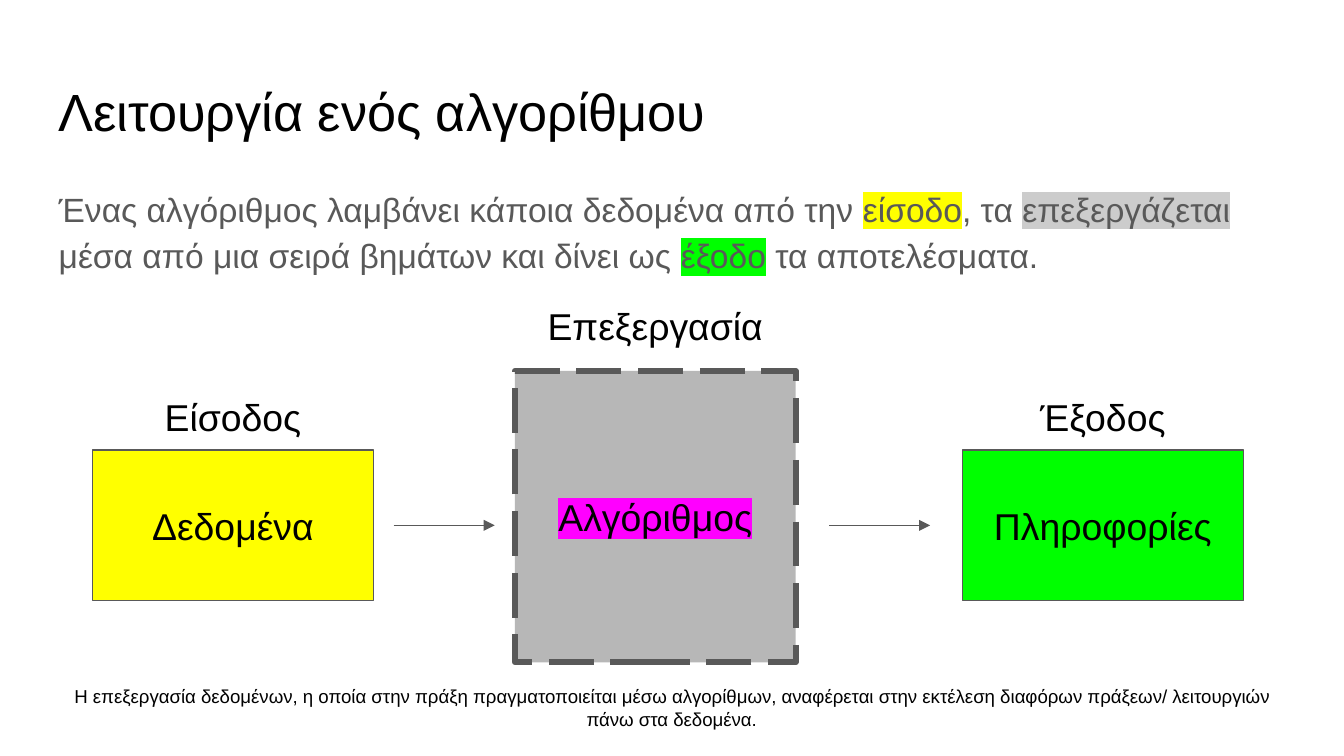
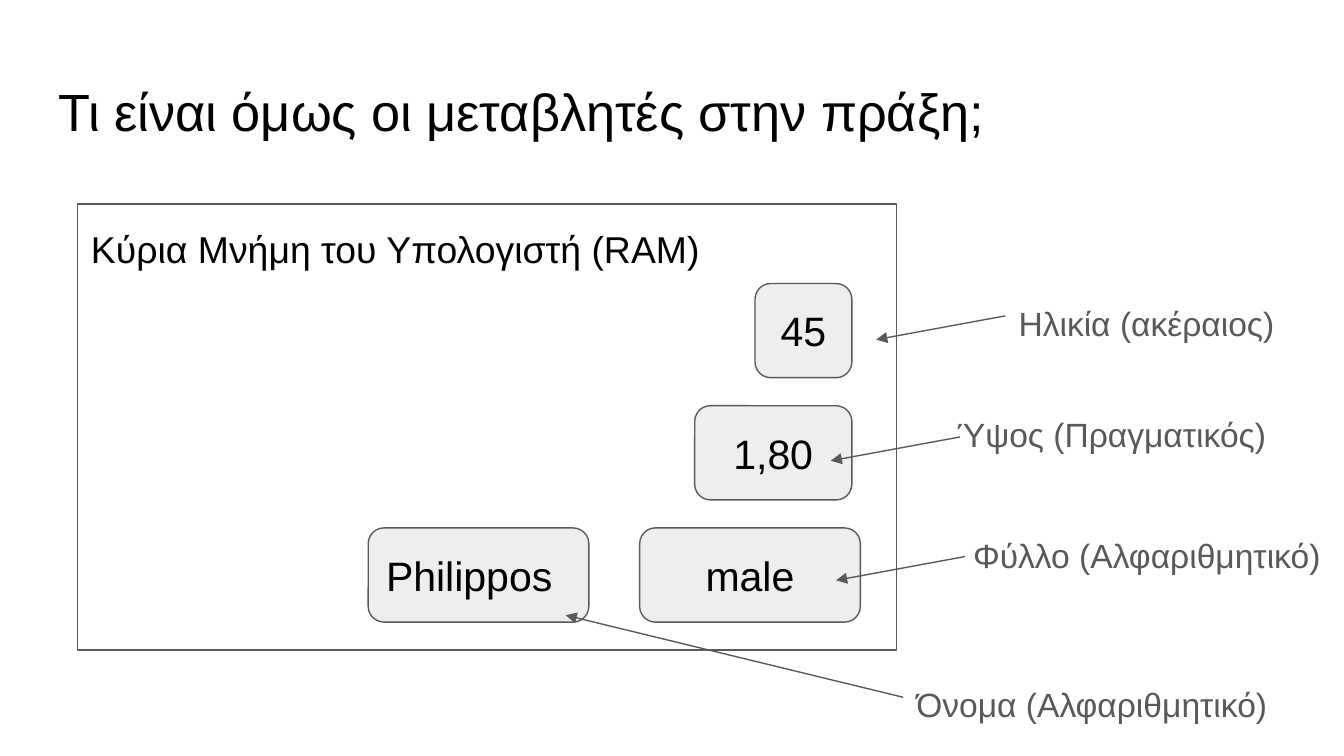
from lxml import etree
from pptx import Presentation
from pptx.dml.color import RGBColor
from pptx.enum.dml import MSO_LINE
from pptx.enum.shapes import MSO_CONNECTOR, MSO_SHAPE
from pptx.enum.text import MSO_ANCHOR, MSO_AUTO_SIZE, PP_ALIGN
from pptx.oxml.ns import qn
from pptx.util import Cm, Pt

RECT = MSO_SHAPE.RECTANGLE
ROUNDED = MSO_SHAPE.ROUNDED_RECTANGLE
STRAIGHT = MSO_CONNECTOR.STRAIGHT
LONG_DASH = MSO_LINE.LONG_DASH
TOP, MIDDLE = MSO_ANCHOR.TOP, MSO_ANCHOR.MIDDLE
LEFT, CENTER = PP_ALIGN.LEFT, PP_ALIGN.CENTER
NO_FIT = MSO_AUTO_SIZE.NONE

BLACK = RGBColor(0x00, 0x00, 0x00)
WHITE = RGBColor(0xFF, 0xFF, 0xFF)
DARK_GREY = RGBColor(0x59, 0x59, 0x59)
MID_GREY = RGBColor(0xB7, 0xB7, 0xB7)
SOFT_GREY = RGBColor(0xCC, 0xCC, 0xCC)
PALE_GREY = RGBColor(0xEE, 0xEE, 0xEE)
YELLOW = RGBColor(0xFF, 0xFF, 0x00)
GREEN = RGBColor(0x00, 0xFF, 0x00)
MAGENTA = RGBColor(0xFF, 0x00, 0xFF)

FONT = "Arial"
INSET = Cm(0.25)
FRAME = {
    "word_wrap": True, "auto_size": NO_FIT, "margin_left": INSET,
    "margin_right": INSET, "margin_top": INSET, "margin_bottom": INSET,
}
PROSE = {"line_spacing": 1.15, "space_after": Pt(16)}
TITLE_BOX = (0.86, 1.24, 23.67, 1.6)


def apply(target, formats):
    for attribute, value in formats.items():
        setattr(target, attribute, value)


def place(shape, box):
    sides = ("left", "top", "width", "height")
    apply(shape, {side: Cm(length) for side, length in zip(sides, box)})


def highlight(run, color):
    fill = run.font._element.find(qn("a:solidFill"))
    marker = etree.Element(qn("a:highlight"))
    etree.SubElement(marker, qn("a:srgbClr"), val=str(color))
    fill.addnext(marker)


def write(shape, runs, size, color=BLACK, align=LEFT, anchor=TOP, spacing=None):
    frame = shape.text_frame
    apply(frame, {**FRAME, "vertical_anchor": anchor})
    paragraph = frame.paragraphs[0]
    apply(paragraph, {"alignment": align, **(spacing or {})})
    for text, marker in runs:
        run = paragraph.add_run()
        run.text = text
        apply(run.font, {"name": FONT, "size": Pt(size)})
        run.font.color.rgb = color
        if marker:
            highlight(run, marker)


def add_text(slide, box, runs, size, **formats):
    textbox = slide.shapes.add_textbox(*map(Cm, box))
    write(textbox, runs, size, **formats)


def add_block(slide, kind, box, fill=None, border=0.75):
    block = slide.shapes.add_shape(kind, *map(Cm, box))
    block.shadow.inherit = False
    if fill is None:
        block.fill.background()
    else:
        block.fill.solid()
        block.fill.fore_color.rgb = fill
    block.line.color.rgb = DARK_GREY
    block.line.width = Pt(border)
    return block


def add_arrow(slide, start, end):
    arrow = slide.shapes.add_connector(STRAIGHT, *map(Cm, (*start, *end)))
    arrow.line.color.rgb = DARK_GREY
    arrow.line.width = Pt(0.75)
    etree.SubElement(arrow.line._get_or_add_ln(), qn("a:tailEnd"), type="triangle")
    etree.SubElement(arrow._element.spPr, qn("a:effectLst"))


def add_titled_slide(deck, title):
    slide = deck.slides.add_slide(deck.slide_layouts[5])
    slide.background.fill.solid()
    slide.background.fill.fore_color.rgb = WHITE
    place(slide.shapes.title, TITLE_BOX)
    write(slide.shapes.title, [(title, None)], 28)
    return slide


def draw_pipeline(slide, box):
    left, top, _, _ = box
    stage_width = 5.31
    stages = [
        ("Είσοδος", "Δεδομένα", YELLOW, None, 0, 3.02, 2.84, (3.4, 1.12, 1.3)),
        ("Επεξεργασία", "Αλγόριθμος", MID_GREY, MAGENTA, 7.98, 1.52, 5.51,
         (5.46, 1.24, 1.52)),
        ("Έξοδος", "Πληροφορίες", GREEN, None, 16.44, 3.02, 2.84, (3.4, 1.12, 1.3)),
    ]
    for label, content, fill, marker, x, y, height, label_size in stages:
        stage_box = (left + x, top + y, stage_width, height)
        stage = add_block(slide, RECT, stage_box, fill, 3 if marker else 0.75)
        if marker:
            stage.line.dash_style = LONG_DASH
        write(stage, [(content, marker)], 20, align=CENTER, anchor=MIDDLE)
        label_width, label_height, rise = label_size
        label_box = (left + x + (stage_width - label_width) / 2,
                     top + y - rise, label_width, label_height)
        add_text(slide, label_box, [(label, None)], 20, align=CENTER)
    flow_y = top + 4.44
    for x in (5.69, 13.92):
        add_arrow(slide, (left + x, flow_y), (left + x + 1.91, flow_y))


def draw_memory(slide, box):
    left, top, _, _ = box
    memory = add_block(slide, RECT, box)
    write(memory, [("Κύρια Μνήμη του Υπολογιστή (RAM)", None)], 20)
    memory.text_frame.margin_top = Cm(0.41)

    first_row, row_step, cell_height = 1.5, 2.31, 1.78
    cells = [
        ("45", 0, 12.8, 1.83, CENTER),
        ("1,80", 1, 11.66, 2.97, CENTER),
        ("male", 2, 10.62, 4.17, CENTER),
        ("Philippos", 2, 5.49, 4.17, LEFT),
    ]
    for value, row, x, width, align in cells:
        cell_box = (left + x, top + first_row + row * row_step, width, cell_height)
        cell = add_block(slide, ROUNDED, cell_box, PALE_GREY)
        write(cell, [(value, None)], 22, align=align, anchor=MIDDLE)

    short_reach = (-2.44, 0.45)
    variables = [
        ("Ηλικία (ακέραιος)", (17.53, 1.5), 5.41, (17.53, 2.11), short_reach),
        ("Ύψος (Πραγματικός)", (16.36, 3.61), 6.58, (16.67, 4.4), short_reach),
        ("Φύλλο (Αλφαριθμητικό)", (16.67, 5.89), 7.26, (16.77, 6.66), short_reach),
        ("Όνομα (Αλφαριθμητικό)", (15.6, 8.71), 7.16, (15.6, 9.32), (-6.38, -1.55)),
    ]
    for name, (x, y), width, (start_x, start_y), (dx, dy) in variables:
        add_text(slide, (left + x, top + y, width, 1.22), [(name, None)], 18,
                 color=DARK_GREY, spacing=PROSE)
        start = (left + start_x, top + start_y)
        add_arrow(slide, start, (start[0] + dx, start[1] + dy))


def build_algorithm_slide(deck):
    slide = add_titled_slide(deck, "Λειτουργία ενός αλγορίθμου")
    definition = [
        ("Ένας αλγόριθμος λαμβάνει κάποια δεδομένα από την ", None),
        ("είσοδο", YELLOW),
        (", τα ", None),
        ("επεξεργάζεται ", SOFT_GREY),
        ("μέσα από μια σειρά βημάτων και δίνει ως ", None),
        ("έξοδο", GREEN),
        (" τα αποτελέσματα.", None),
    ]
    add_text(slide, (0.86, 3.2, 23.67, 9.5), definition, 18,
             color=DARK_GREY, spacing=PROSE)
    draw_pipeline(slide, (1.75, 5.49, 21.75, 7.03))
    remark = (
        "Η επεξεργασία δεδομένων, η οποία στην πράξη πραγματοποιείται μέσω "
        "αλγορίθμων, αναφέρεται στην εκτέλεση διαφόρων πράξεων/ λειτουργιών "
        "πάνω στα δεδομένα."
    )
    add_text(slide, (0.86, 12.7, 23.67, 1.85), [(remark, None)], 10, align=CENTER)


def build_variables_slide(deck):
    slide = add_titled_slide(deck, "Τι είναι όμως οι μεταβλητές στην πράξη;")
    draw_memory(slide, (1.47, 3.86, 15.47, 8.43))


def main():
    deck = Presentation()
    apply(deck, {"slide_width": Cm(25.4), "slide_height": Cm(14.29)})
    build_algorithm_slide(deck)
    build_variables_slide(deck)
    deck.save("out.pptx")


if __name__ == "__main__":
    main()
